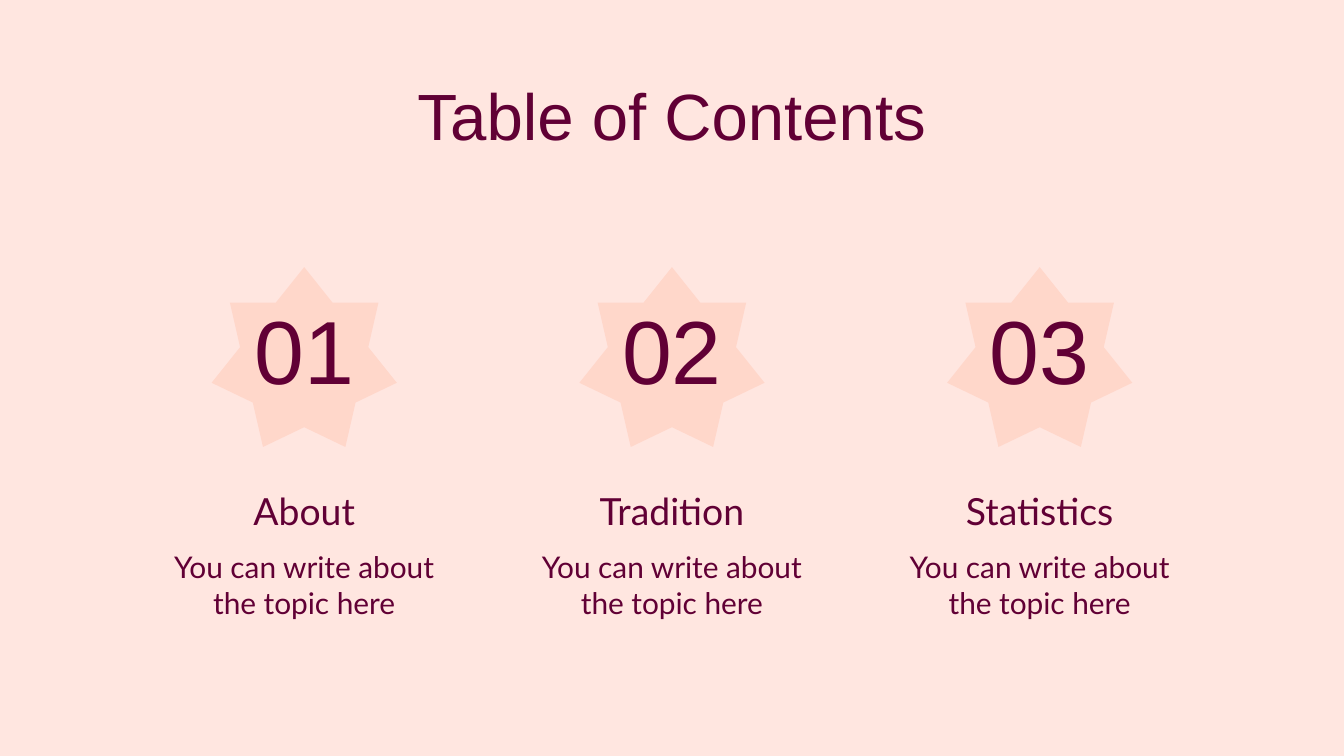
from dataclasses import dataclass

from lxml import etree
from pptx import Presentation
from pptx import util as u
from pptx.dml.color import RGBColor
from pptx.enum import shapes, text
from pptx.oxml.ns import qn

BACKGROUND = "FFE6E0"
PLUM = "610035"
CORAL = "FF946B"
INSET = u.Cm(0.25)
SLIDE_WIDTH = 25.4
COLUMN_PITCH = 6.95


@dataclass
class Section:
    heading: str
    summary: str


@dataclass
class TextStyle:
    top: float
    width: float
    height: float
    font: str
    size: float
    anchor: text.MSO_ANCHOR = text.MSO_ANCHOR.TOP


TITLE = TextStyle(1.17, 23.67, 1.6, "Arial", 35)
NUMBER = TextStyle(5.08, 5.46, 2.77, "Arial", 48, text.MSO_ANCHOR.BOTTOM)
HEADING = TextStyle(8.76, 6.27, 1.57, "Lato", 20, text.MSO_ANCHOR.BOTTOM)
SUMMARY = TextStyle(10.13, 6.27, 2.29, "Lato", 16)

SECTIONS = [
    Section("About", "You can write about the topic here"),
    Section("Tradition", "You can write about the topic here"),
    Section("Statistics", "You can write about the topic here"),
]


def paint(fill, color: str) -> None:
    fill.solid()
    fill.fore_color.rgb = RGBColor.from_string(color)


def write(shape, words: str, center: float, style: TextStyle) -> None:
    """Place a text shape around a centre line, fill it and format it."""
    shape.left, shape.top = u.Cm(center - style.width / 2), u.Cm(style.top)
    shape.width, shape.height = u.Cm(style.width), u.Cm(style.height)
    frame = shape.text_frame
    frame.text = words
    frame.word_wrap = True
    frame.auto_size = text.MSO_AUTO_SIZE.NONE
    frame.vertical_anchor = style.anchor
    frame.margin_left = frame.margin_right = INSET
    frame.margin_top = frame.margin_bottom = INSET
    paragraph = frame.paragraphs[0]
    paragraph.alignment = text.PP_ALIGN.CENTER
    paragraph.line_spacing = 1.0
    font = paragraph.runs[0].font
    font.name, font.size = style.font, u.Pt(style.size)
    paint(font.fill, PLUM)


def add_star(slide, center: float) -> None:
    width, height = 3.5, 3.4
    star = slide.shapes.add_shape(
        shapes.MSO_SHAPE.STAR_7_POINT,
        u.Cm(center - width / 2), u.Cm(5.05), u.Cm(width), u.Cm(height))
    star.shadow.inherit = False
    star.line.fill.background()
    paint(star.fill, CORAL)
    tint = star.fill._xPr.find(f"{qn('a:solidFill')}/{qn('a:srgbClr')}")
    etree.SubElement(tint, qn("a:alpha")).set("val", "18000")


def add_section(slide, number: int, center: float, section: Section) -> None:
    add_star(slide, center)
    for words, style in ((f"{number:02d}", NUMBER),
                         (section.heading, HEADING),
                         (section.summary, SUMMARY)):
        write(slide.shapes.add_textbox(0, 0, 0, 0), words, center, style)


def main() -> None:
    deck = Presentation()
    deck.slide_width, deck.slide_height = u.Cm(SLIDE_WIDTH), u.Cm(14.29)
    slide = deck.slides.add_slide(deck.slide_layouts[5])
    paint(slide.background.fill, BACKGROUND)
    middle = SLIDE_WIDTH / 2
    write(slide.shapes.title, "Table of Contents", middle, TITLE)
    for number, section in enumerate(SECTIONS, start=1):
        add_section(slide, number, middle + (number - 2) * COLUMN_PITCH, section)
    deck.save("out.pptx")


if __name__ == "__main__":
    main()
